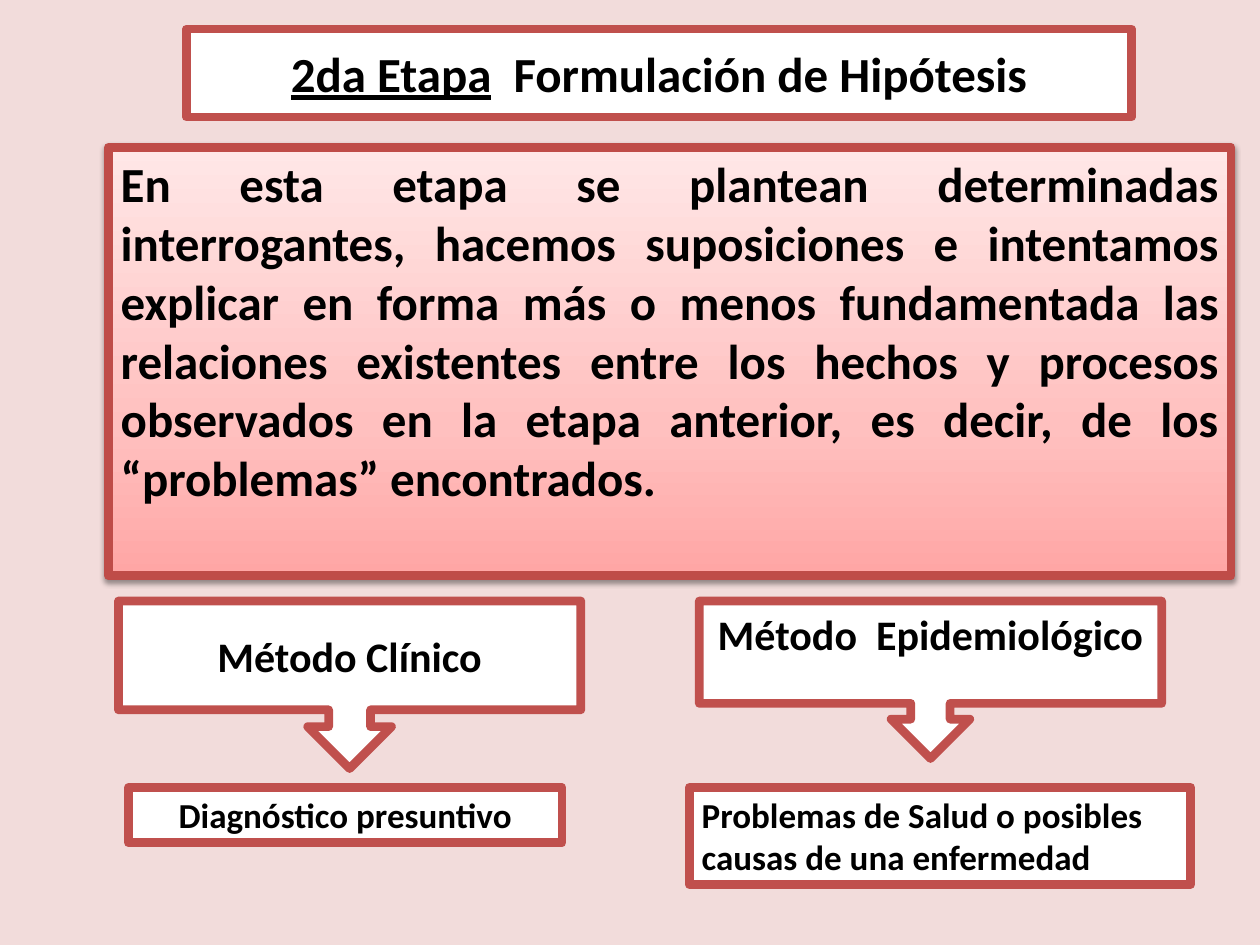
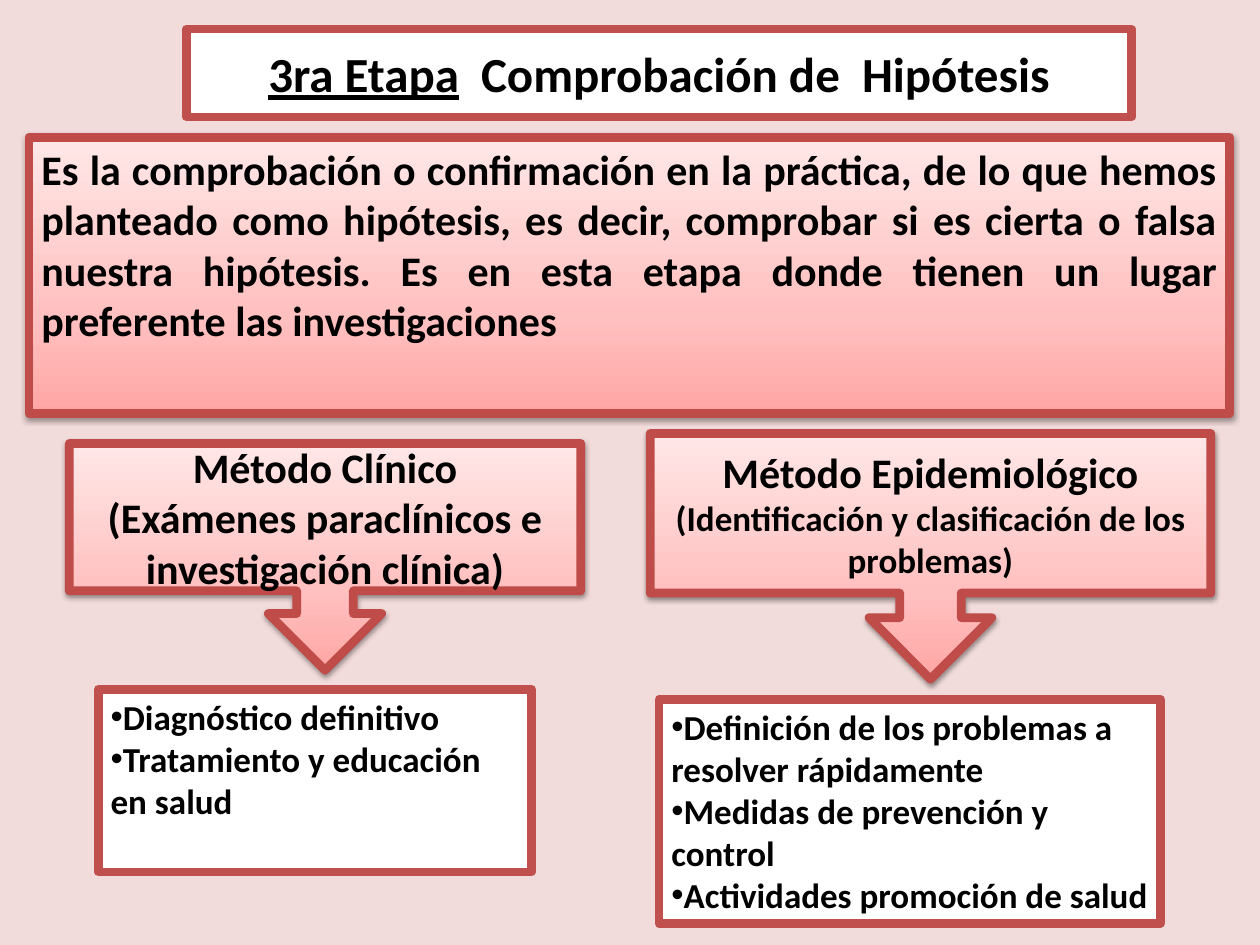
from dataclasses import dataclass

from lxml import etree
from pptx import Presentation
from pptx.dml.color import RGBColor
from pptx.enum.shapes import MSO_SHAPE
from pptx.enum.text import MSO_ANCHOR, PP_ALIGN
from pptx.oxml.ns import qn
from pptx.util import Inches, Pt

RECTANGLE, CALLOUT = MSO_SHAPE.RECTANGLE, MSO_SHAPE.DOWN_ARROW_CALLOUT
TOP, MIDDLE, BOTTOM = MSO_ANCHOR.TOP, MSO_ANCHOR.MIDDLE, MSO_ANCHOR.BOTTOM
LEFT, CENTER, JUSTIFY = PP_ALIGN.LEFT, PP_ALIGN.CENTER, PP_ALIGN.JUSTIFY

FONT = "Calibri"
BACKGROUND, WHITE, BLACK = "F2DCDB", "FFFFFF", "000000"
PLAIN_BORDER, GLOW_BORDER = "C0504D", "BF4C48"
GRADIENT = ((0, "FFA6A5"), (35, "FFC0BF"), (100, "FFE7E7"))


@dataclass(frozen=True)
class Line:
    text: str
    size: int = 20
    underlined: str = ""  # lead-in drawn underlined before the text
    bullet: bool = False


@dataclass(frozen=True)
class Box:
    place: tuple[float, float, float, float]
    lines: tuple[Line, ...]
    kind: int = RECTANGLE
    align: int = LEFT
    anchor: int = TOP
    glowing: bool = False  # pink gradient with a shadow
    bottom_inset: float = 0.05


def color(value: str) -> RGBColor:
    return RGBColor.from_string(value)


def add_color(parent, value: str):
    return etree.SubElement(parent, qn("a:srgbClr"), val=value)


def add_text(paragraph, text: str, *, size: int, underline: bool = False) -> None:
    run = paragraph.add_run()
    run.text = text
    font = run.font
    font.name, font.size, font.bold = FONT, Pt(size), True
    font.underline = underline
    font.color.rgb = color(BLACK)


def add_bullet(paragraph) -> None:
    properties = paragraph._p.get_or_add_pPr()
    properties.set("marL", "0")
    properties.set("indent", "0")
    etree.SubElement(properties, qn("a:buFont"), typeface="Arial")
    etree.SubElement(properties, qn("a:buChar"), char="•")


def apply_glow(shape) -> None:
    shape.fill.gradient()
    shape.fill.gradient_angle = 90
    properties = shape._element.spPr
    stops = properties.find(".//" + qn("a:gsLst"))
    for stop in list(stops):
        stops.remove(stop)
    for position, value in GRADIENT:
        add_color(etree.SubElement(stops, qn("a:gs"), pos=str(position * 1000)), value)
    shadow = etree.SubElement(
        properties.find(qn("a:effectLst")), qn("a:outerShdw"),
        blurRad=str(Pt(3.1)), dist=str(Pt(1.6)), dir="5400000", rotWithShape="0")
    etree.SubElement(add_color(shadow, BLACK), qn("a:alpha"), val="38000")


def draw_box(slide, box: Box) -> None:
    shape = slide.shapes.add_shape(box.kind, *map(Inches, box.place))
    shape.shadow.inherit = False
    if box.glowing:
        apply_glow(shape)
    else:
        shape.fill.solid()
        shape.fill.fore_color.rgb = color(WHITE)
    shape.line.color.rgb = color(GLOW_BORDER if box.glowing else PLAIN_BORDER)
    shape.line.width = Pt(5)

    frame = shape.text_frame
    frame.word_wrap = True
    frame.vertical_anchor = box.anchor
    frame.margin_bottom = Inches(box.bottom_inset)
    for index, line in enumerate(box.lines):
        paragraph = frame.add_paragraph() if index else frame.paragraphs[0]
        paragraph.alignment = box.align
        if line.bullet:
            add_bullet(paragraph)
        if line.underlined:
            add_text(paragraph, line.underlined, size=line.size, underline=True)
        add_text(paragraph, line.text, size=line.size)


# Box families shared by the slides
def title(stage: str, name: str) -> Box:
    return Box((1.48, 0.23, 7.5, 0.7), (Line("  " + name, 28, stage),),
               align=CENTER, anchor=MIDDLE)


def statement(place: tuple, text: str, size: int) -> Box:
    return Box(place, (Line(text, size),), align=JUSTIFY, glowing=True)


def method(place: tuple, *lines: Line, **options) -> Box:
    return Box(place, lines, CALLOUT, CENTER, **{"anchor": MIDDLE, **options})


def bullet_list(place: tuple, *items: str) -> Box:
    return Box(place, tuple(Line(item, bullet=True) for item in items))


HYPOTHESIS = (
    title("2da Etapa", "Formulación de Hipótesis"),
    statement((0.86, 1.17, 8.91, 3.4),
              "En esta etapa se plantean determinadas interrogantes, hacemos "
              "suposiciones e intentamos explicar en forma más o menos fundamentada "
              "las relaciones existentes entre los hechos y procesos observados en la "
              "etapa anterior, es decir, de los “problemas” encontrados.", 28),
    method((0.94, 4.77, 3.67, 1.33), Line("Método Clínico", 24)),
    method((5.55, 4.77, 3.67, 1.25), Line("Método  Epidemiológico", 24),
           anchor=BOTTOM, bottom_inset=0.35),
    Box((1.02, 6.25, 3.44, 0.44), (Line("Diagnóstico presuntivo"),), align=CENTER),
    Box((5.47, 6.25, 3.98, 0.77),
        (Line("Problemas de Salud o posibles causas de una enfermedad"),)),
)

VERIFICATION = (
    title("3ra Etapa", "Comprobación de  Hipótesis"),
    statement((0.23, 1.09, 9.53, 2.19),
              "Es la comprobación o confirmación en la práctica, de lo que hemos "
              "planteado como hipótesis, es decir, comprobar si es cierta o falsa "
              "nuestra hipótesis. Es en esta etapa donde tienen un lugar preferente "
              "las investigaciones", 24),
    method((0.55, 3.52, 4.06, 1.8), Line("Método Clínico", 24),
           Line("(Exámenes paraclínicos e investigación clínica)", 24), glowing=True),
    bullet_list((0.78, 5.47, 3.44, 1.45),
                "Diagnóstico definitivo", "Tratamiento y educación en salud"),
    bullet_list((5.23, 5.55, 3.98, 1.78),
                "Definición de los problemas a resolver rápidamente",
                "Medidas de prevención y control",
                "Actividades promoción de salud"),
    method((5.16, 3.44, 4.45, 1.95), Line("Método Epidemiológico", 24),
           Line("(Identificación y clasificación de los problemas)"), glowing=True),
)


def main() -> None:
    presentation = Presentation()
    presentation.slide_width, presentation.slide_height = Inches(10), Inches(7.5)
    for boxes in (HYPOTHESIS, VERIFICATION):
        slide = presentation.slides.add_slide(presentation.slide_layouts[6])
        slide.background.fill.solid()
        slide.background.fill.fore_color.rgb = color(BACKGROUND)
        for box in boxes:
            draw_box(slide, box)
    presentation.save("out.pptx")


if __name__ == "__main__":
    main()
